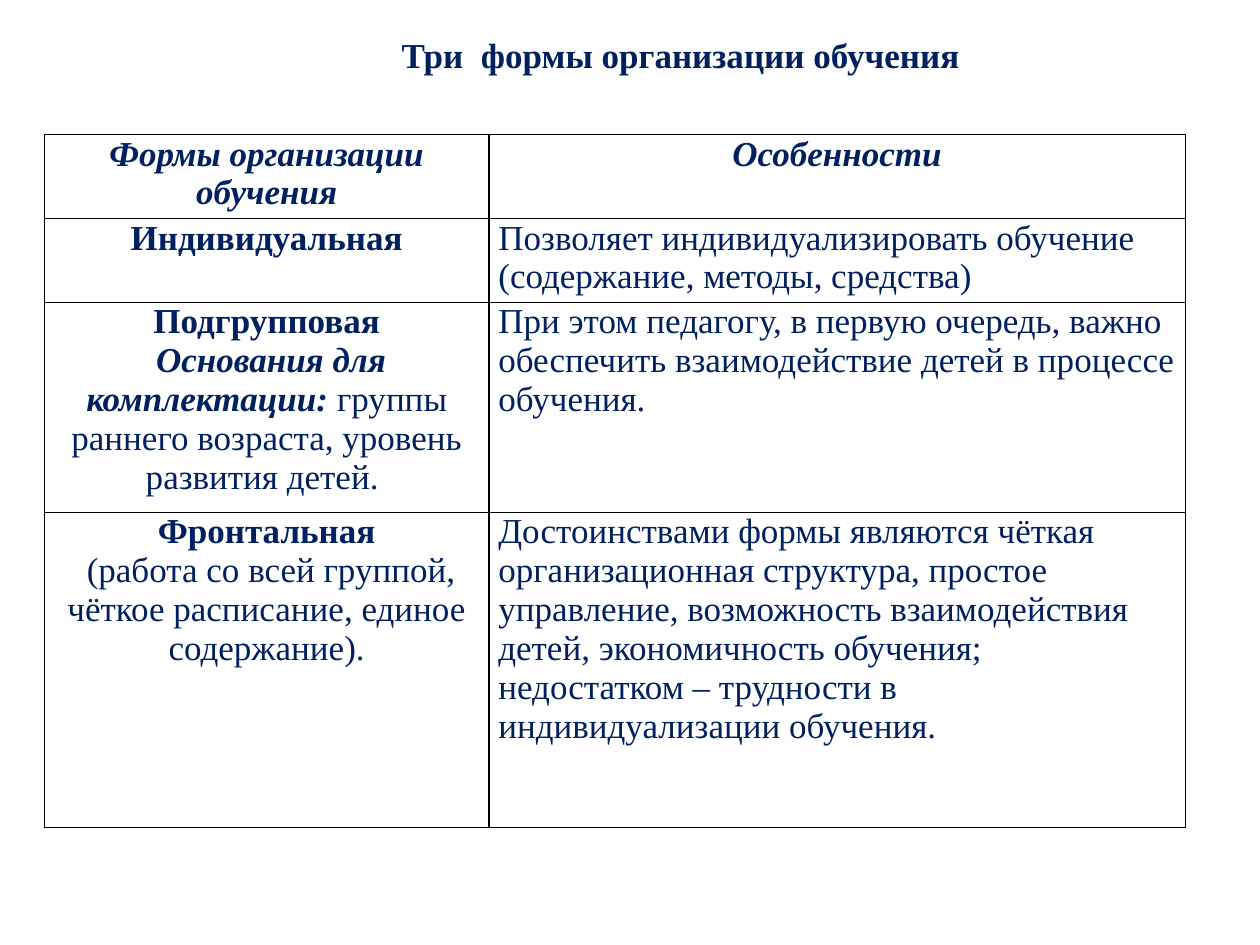
from dataclasses import dataclass

from lxml import etree
from pptx import Presentation
from pptx.dml.color import RGBColor
from pptx.enum.text import MSO_ANCHOR, MSO_AUTO_SIZE, PP_ALIGN
from pptx.oxml.ns import qn
from pptx.util import Pt

CENTER, LEFT = PP_ALIGN.CENTER, PP_ALIGN.LEFT
MIDDLE, TOP = MSO_ANCHOR.MIDDLE, MSO_ANCHOR.TOP
NO_AUTOFIT = MSO_AUTO_SIZE.NONE
TITLE_ONLY = 5
BOLD, ITALIC = "b", "i"


@dataclass(frozen=True)
class Theme:
    """Colours, type and line sizes of the slide."""
    font: str = "Times New Roman"
    size: float = 20
    ink: str = "002060"
    paper: str = "FFFFFF"
    border: str = "000000"
    border_width: float = 1
    cell_margin: float = 5.4


THEME = Theme()
TITLE = "Три  формы организации обучения "
COLUMNS = [254, 398]
ROW_HEIGHTS = [48, 48, 120, 180]
ROWS = [
    ([[("Формы организации обучения", BOLD + ITALIC)]],
     [[("Особенности", BOLD + ITALIC)]]),
    ([[("Индивидуальная", BOLD)]],
     [[("Позволяет индивидуализировать обучение (содержание, методы, средства)", "")]]),
    ([[("Подгрупповая", BOLD)],
      [(" ", BOLD), ("Основания для комплектации:", BOLD + ITALIC),
       (" группы раннего возраста, уровень развития детей. ", "")]],
     [[("При этом педагогу, в первую очередь, важно обеспечить взаимодействие "
        "детей в процессе обучения.", "")]]),
    ([[("Фронтальная", BOLD)],
      [(" ", BOLD),
       ("(работа со всей группой, чёткое расписание, единое содержание).", "")]],
     [[("Достоинствами формы являются чёткая организационная структура, простое "
        "управление, возможность взаимодействия детей, экономичность обучения;", ""),
       ("\n", ""),
       ("недостатком – трудности в индивидуализации обучения.", "")]]),
]


def add_run(p, text, style):
    """Add one run in the theme font, or a line break."""
    if text == "\n":
        p.add_line_break()
        return
    r = p.add_run()
    r.text = text
    r.font.name = THEME.font
    r.font.size = Pt(THEME.size)
    r.font.bold = BOLD in style
    r.font.italic = ITALIC in style
    r.font.color.rgb = RGBColor.from_string(THEME.ink)


def add_paragraphs(tf, paragraphs, align):
    """Fill a text frame with paragraphs of styled runs."""
    for i, runs in enumerate(paragraphs):
        p = tf.add_paragraph() if i else tf.paragraphs[0]
        p.alignment = align
        for text, style in runs:
            add_run(p, text, style)


def set_borders(cell):
    """Draw a solid line on the four sides of a cell."""
    tc_pr = cell._tc.get_or_add_tcPr()
    for i, side in enumerate(("a:lnL", "a:lnR", "a:lnT", "a:lnB")):
        ln = etree.Element(qn(side), w=str(Pt(THEME.border_width)))
        fill = etree.SubElement(ln, qn("a:solidFill"))
        etree.SubElement(fill, qn("a:srgbClr"), val=THEME.border)
        tc_pr.insert(i, ln)


def place_title(s, x, y, w, h):
    """Place the title placeholder in its box."""
    sp = s.shapes.title
    sp.left, sp.top, sp.width, sp.height = Pt(x), Pt(y), Pt(w), Pt(h)
    tf = sp.text_frame
    tf.auto_size = NO_AUTOFIT
    tf.word_wrap = False
    tf.vertical_anchor = MIDDLE
    add_paragraphs(tf, [[(TITLE, BOLD)]], CENTER)


def fill_cell(cell, paragraphs, align):
    """Format one table cell and write its text."""
    cell.margin_left = cell.margin_right = Pt(THEME.cell_margin)
    cell.margin_top = cell.margin_bottom = 0
    cell.vertical_anchor = TOP
    cell.fill.solid()
    cell.fill.fore_color.rgb = RGBColor.from_string(THEME.paper)
    set_borders(cell)
    add_paragraphs(cell.text_frame, paragraphs, align)


def place_table(s, x, y, w, h):
    """Place the table of teaching forms in its box."""
    table = s.shapes.add_table(len(ROWS), len(COLUMNS), Pt(x), Pt(y), Pt(w), Pt(h)).table
    for column, share in zip(table.columns, COLUMNS):
        column.width = Pt(w * share / sum(COLUMNS))
    for row, share in zip(table.rows, ROW_HEIGHTS):
        row.height = Pt(h * share / sum(ROW_HEIGHTS))
    for i, texts in enumerate(ROWS):
        for j, paragraphs in enumerate(texts):
            align = LEFT if i and j else CENTER
            fill_cell(table.cell(i, j), paragraphs, align)


def main():
    """Build and save the slide."""
    prs = Presentation()
    prs.slide_width, prs.slide_height = Pt(720), Pt(540)
    s = prs.slides.add_slide(prs.slide_layouts[TITLE_ONLY])
    place_title(s, 221, 15, 341, 32)
    place_table(s, 25.4, 77, sum(COLUMNS), sum(ROW_HEIGHTS))
    prs.save("out.pptx")


if __name__ == "__main__":
    main()
